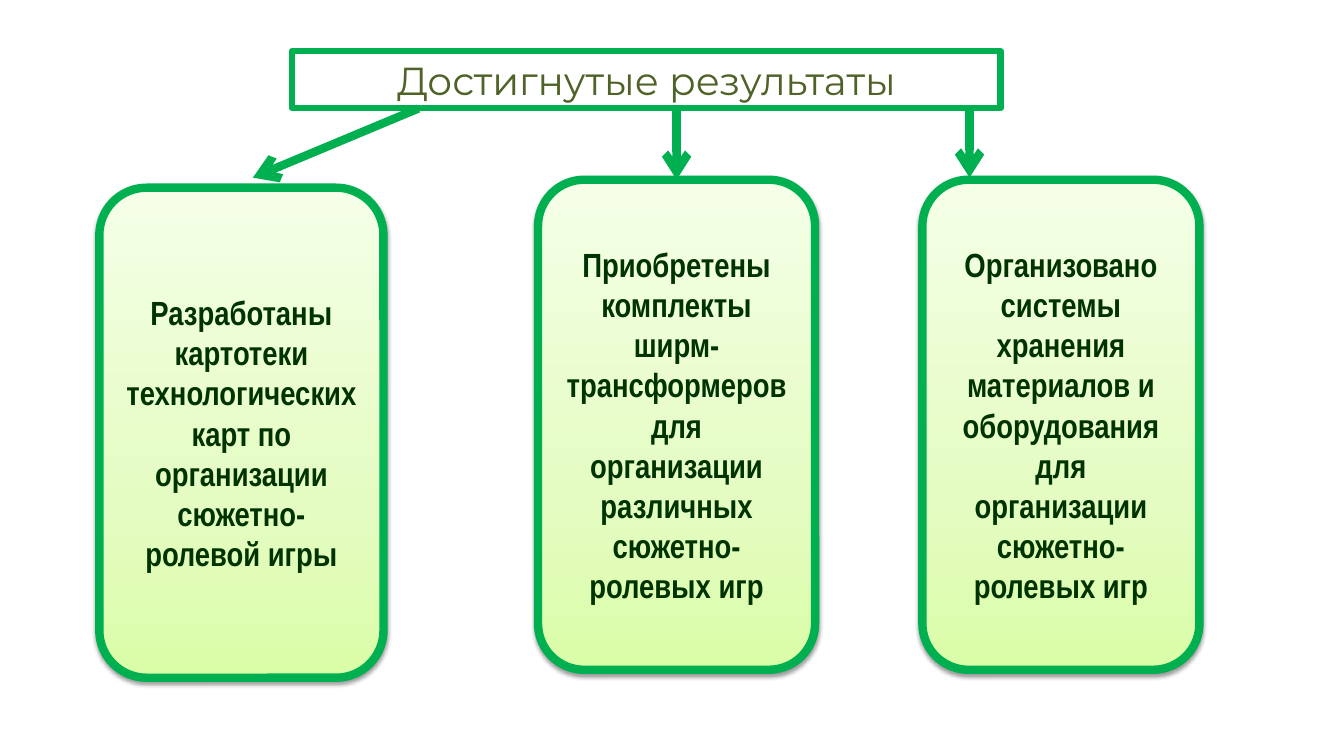
from lxml import etree
from pptx import Presentation
from pptx.dml.color import RGBColor
from pptx.enum.shapes import MSO_CONNECTOR, MSO_SHAPE
from pptx.enum.text import MSO_ANCHOR, PP_ALIGN
from pptx.oxml import parse_xml
from pptx.oxml.ns import nsdecls, qn
from pptx.util import Pt

RECT, ROUND = MSO_SHAPE.RECTANGLE, MSO_SHAPE.ROUNDED_RECTANGLE
LINE = MSO_CONNECTOR.STRAIGHT
CENTER, MIDDLE = PP_ALIGN.CENTER, MSO_ANCHOR.MIDDLE

# Content
TITLE = "Достигнутые результаты"
CARDS = [  # text, left, top, width
    ("Разработаны картотеки технологических карт по организации "
     "сюжетно-ролевой игры", 71.3, 134.6, 203.8),
    ("Приобретены комплекты ширм-трансформеров для организации "
     "различных сюжетно-ролевых игр", 386, 128.9, 198.7),
    ("Организовано системы хранения материалов и оборудования для "
     "организации сюжетно-ролевых игр", 661.7, 128.9, 198.7),
]
CARD_H = 351.4
MID_X = 386 + 198.7 / 2
ARROWS = [  # start x, y, end x, y, card joined at its top
    (300.2, 77.8, 181.4, 127.4, None),
    (MID_X, 79.2, MID_X, 128.9, 1),
    (695.5, 77.8, 695.5, 127.4, None),
]
COLORS = {"green": "00B050", "olive": "4F6228", "dark": "003300"}
STOPS = [(0, "DAFDA7"), (35, "E4FCC2"), (100, "F5FFE7")]


def rgb(name):
    return RGBColor.from_string(COLORS[name])


def stroke(item, width):
    item.line.color.rgb = rgb("green")
    item.line.width = Pt(width)


def write(shape, text, font, size, color, bold=False, anchor=MIDDLE):
    frame = shape.text_frame
    frame.word_wrap = True
    frame.vertical_anchor = anchor
    para = frame.paragraphs[0]
    para.alignment = CENTER
    run = para.add_run()
    run.text = text
    run.font.name, run.font.size = font, Pt(size)
    run.font.bold = bold
    run.font.color.rgb = rgb(color)


def box(kind, left, top, width, height, line):
    shape = slide.shapes.add_shape(kind, Pt(left), Pt(top), Pt(width), Pt(height))
    shape.shadow.inherit = False
    stroke(shape, line)
    return shape


def shade(shape):
    """Three-stop gradient, pale at the top, and a soft shadow below."""
    shape.fill.gradient()
    shape.fill.gradient_angle = 90
    props = shape._element.spPr
    stops = props.find(".//" + qn("a:gsLst"))
    for old in list(stops):
        stops.remove(old)
    for pos, color in STOPS:
        stops.append(parse_xml(
            f'<a:gs {nsdecls("a")} pos="{pos * 1000}"><a:srgbClr val="{color}"/></a:gs>'))
    props.find(qn("a:effectLst")).append(parse_xml(
        f'<a:outerShdw {nsdecls("a")} blurRad="{Pt(3.1)}" dist="{Pt(1.6)}" '
        'dir="5400000" rotWithShape="0"><a:srgbClr val="000000">'
        '<a:alpha val="38000"/></a:srgbClr></a:outerShdw>'))


prs = Presentation()
prs.slide_width, prs.slide_height = Pt(964.08), Pt(538.56)
slide = prs.slides.add_slide(prs.slide_layouts[6])

# Title
head = box(RECT, 209.5, 36.7, 508.3, 41, 4.5)
head.fill.background()
write(head, TITLE, "Montserrat", 28, "olive", anchor=MSO_ANCHOR.TOP)

# Cards
cards = []
for text, left, top, width in CARDS:
    card = box(ROUND, left, top, width, CARD_H, 6)
    shade(card)
    write(card, text, "Arial Narrow", 24, "dark", bold=True)
    cards.append(card)

# Arrows
for x1, y1, x2, y2, goal in ARROWS:
    arrow = slide.shapes.add_connector(LINE, Pt(x1), Pt(y1), Pt(x2), Pt(y2))
    stroke(arrow, 6)
    etree.SubElement(arrow.line._get_or_add_ln(), qn("a:tailEnd"), type="arrow")
    etree.SubElement(arrow._element.spPr, qn("a:effectLst"))
    if goal is not None:
        arrow.end_connect(cards[goal], 0)

prs.save("out.pptx")
